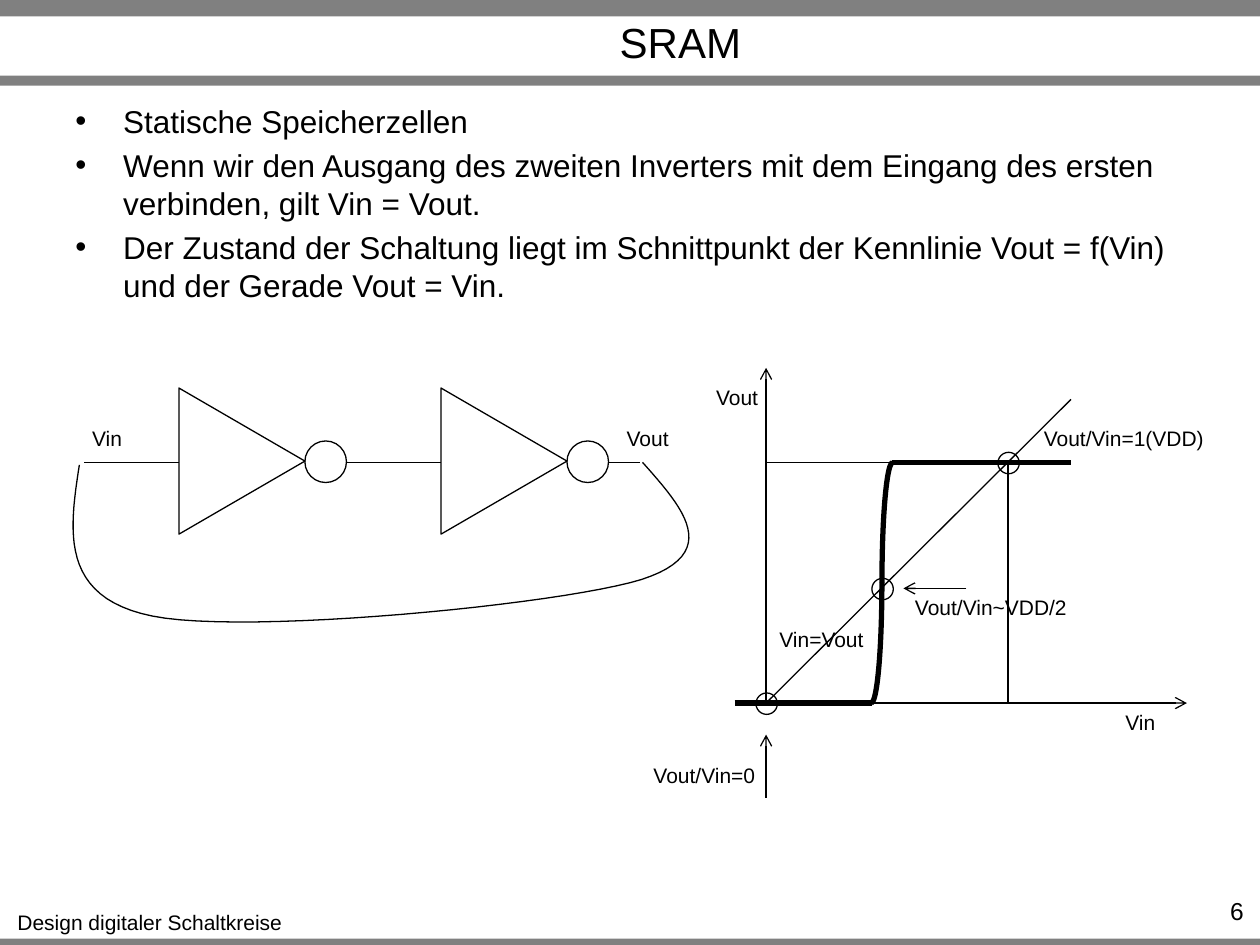
from lxml.etree import SubElement
from pptx import Presentation
from pptx.dml.color import RGBColor
from pptx.enum.shapes import MSO_CONNECTOR, MSO_SHAPE as SHAPE
from pptx.enum.text import MSO_ANCHOR as ANCHOR, MSO_AUTO_SIZE as FIT, PP_ALIGN as ALIGN
from pptx.oxml.ns import qn
from pptx.util import Inches, Pt

BLACK = RGBColor(0, 0, 0)
WHITE = RGBColor(255, 255, 255)
GRAY = RGBColor(128, 128, 128)
THIN, THICK = 0.75, 3

# Content
TITLE = "SRAM"
FOOTER = "Design digitaler Schaltkreise"
PAGE = "6"
BULLETS = [
    "Statische Speicherzellen",
    "Wenn wir den Ausgang des zweiten Inverters mit dem Eingang des ersten "
    "verbinden, gilt Vin = Vout.",
    "Der Zustand der Schaltung liegt im Schnittpunkt der Kennlinie "
    "Vout = f(Vin) und der Gerade Vout = Vin.",
]
LABELS = [  # text, left, top, width
    (FOOTER, 0.03, 7.17, 2.32),
    ("Vin", 0.63, 3.33, 0.44),
    ("Vout", 4.87, 3.33, 0.54),
    ("Vin", 8.83, 5.58, 0.44),
    ("Vout", 5.58, 3, 0.54),
    ("Vin=Vout", 6.08, 4.92, 0.88),
    ("Vout/Vin=0", 5.08, 6, 1.02),
    ("Vout/Vin=1(VDD)", 8.18, 3.33, 1.48),
    ("Vout/Vin~VDD/2", 7.13, 4.67, 1.47),
]
BARS = [(7.45, 0.08), (0, 0.13), (0.6, 0.08)]  # top, height

# Circuit: both inverters sit on the height of the high level
HIGH, LOW = 3.67, 5.58
INVERTER_INPUTS = [0.67, 2.75]
FEEDBACK_START = (5.1, 3.67)
FEEDBACK = [  # two control points and an end point each
    ((5.42, 4.03), (5.74, 4.39), (5.09, 4.6)),
    ((4.44, 4.8), (1.96, 5.04), (1.21, 4.89)),
    ((0.47, 4.74), (0.55, 4.21), (0.63, 3.69)),
]

# Diagram
ORIGIN, MIDDLE, VDD = 6.08, 7, 8
MIDDLE_LEVEL = 4.67
DIAGRAM_LINES = [  # from, to, width, arrow
    ((ORIGIN, LOW), (9.42, LOW), THIN, True),
    ((ORIGIN, LOW), (ORIGIN, 2.92), THIN, True),
    ((5.83, LOW), (6.92, LOW), THICK, False),
    ((7.08, HIGH), (8.5, HIGH), THICK, False),
    ((ORIGIN, LOW), (8.5, 3.17), THIN, False),
    ((ORIGIN, HIGH), (VDD, HIGH), THIN, False),
    ((VDD, HIGH), (VDD, LOW), THIN, False),
    ((ORIGIN, 6.33), (ORIGIN, 5.83), THIN, True),
    ((7.67, MIDDLE_LEVEL), (7.17, MIDDLE_LEVEL), THIN, True),
]
CURVE_ARCS = [(MIDDLE, "flipH"), (MIDDLE - 0.17, "flipV")]  # left, flip
CROSSINGS = [(VDD, HIGH), (MIDDLE, MIDDLE_LEVEL), (ORIGIN, LOW)]

FRAME = {"word_wrap": True, "auto_size": FIT.NONE, "vertical_anchor": ANCHOR.TOP}


def box(*lengths):
    return [Inches(length) for length in lengths]


def write(frame, texts, size, align, **frame_format):
    for name, value in {**FRAME, **frame_format}.items():
        setattr(frame, name, value)
    for index, text in enumerate(texts):
        paragraph = frame.paragraphs[0] if index == 0 else frame.add_paragraph()
        paragraph.text = text
        paragraph.alignment = align
        font_format = {"name": "Arial", "size": Pt(size)}
        for name, value in font_format.items():
            setattr(paragraph.runs[0].font, name, value)
        paragraph.runs[0].font.color.rgb = BLACK


def outline(shape, width=THIN, fill=None):
    shape.shadow.inherit = False
    shape.line.color.rgb = BLACK
    shape.line.width = Pt(width)
    if fill is None:
        shape.fill.background()
    else:
        shape.fill.solid()
        shape.fill.fore_color.rgb = fill


def add_line(shapes, start, end, width=THIN, arrow=False):
    line = shapes.add_connector(MSO_CONNECTOR.STRAIGHT, *box(*start, *end))
    line.line.color.rgb = BLACK
    line.line.width = Pt(width)
    if arrow:
        SubElement(line.line._get_or_add_ln(), qn("a:tailEnd"), type="arrow")
    SubElement(line._element.spPr, qn("a:effectLst"))


def add_inverter(shapes, x):
    """Draw wire, bubble, triangle and input wire from x to the right."""
    tip = x + 1.75
    add_line(shapes, (tip, HIGH), (tip + 0.58, HIGH))
    bubble = shapes.add_shape(SHAPE.OVAL, *box(tip, HIGH - 0.17, 0.33, 0.33))
    outline(bubble, fill=WHITE)
    triangle = shapes.add_shape(SHAPE.ISOSCELES_TRIANGLE,
                                *box(tip - 1.08, HIGH - 0.51, 1.16, 1))
    triangle.rotation = 90
    outline(triangle)
    add_line(shapes, (x, HIGH), (x + 0.75, HIGH))


def bezier(p0, p1, p2, p3, steps=24):
    for step in range(1, steps + 1):
        t = step / steps
        u = 1 - t
        yield tuple(u**3 * a + 3 * u * u * t * b + 3 * u * t * t * c + t**3 * d
                    for a, b, c, d in zip(p0, p1, p2, p3))


def main():
    prs = Presentation()
    prs.slide_width, prs.slide_height = box(10, 7.5)
    slide = prs.slides.add_slide(prs.slide_layouts[5])
    shapes = slide.shapes

    # Bars
    for top, height in BARS:
        bar = shapes.add_shape(SHAPE.RECTANGLE, *box(0, top, 10, height))
        bar.shadow.inherit = False
        bar.fill.solid()
        bar.fill.fore_color.rgb = GRAY
        bar.line.fill.background()

    # Title
    title = shapes.title
    title.left, title.top, title.width, title.height = box(1.3, 0.14, 8.2, 0.38)
    write(title.text_frame, [TITLE], 24, ALIGN.CENTER, vertical_anchor=ANCHOR.MIDDLE)

    # Bullets
    body = shapes.add_textbox(*box(0.5, 0.76, 9, 1.75)).text_frame
    write(body, BULLETS, 18, ALIGN.LEFT)
    for index, paragraph in enumerate(body.paragraphs):
        paragraph.space_before = Pt(3.6 if index else 0)
        properties = paragraph._p.get_or_add_pPr()
        properties.set("marL", str(Inches(0.38)))
        properties.set("indent", str(Inches(-0.38)))
        SubElement(properties, qn("a:buFont"), typeface="Arial")
        SubElement(properties, qn("a:buChar"), char="•")

    # Page number
    page = shapes.add_textbox(*box(9.1, 7.06, 0.87, 0.24))
    write(page.text_frame, [PAGE], 14, ALIGN.RIGHT)

    # Inverters and feedback wire
    for x in INVERTER_INPUTS:
        add_inverter(shapes.add_group_shape().shapes, x)
    points = [FEEDBACK_START]
    for curve in FEEDBACK:
        points.extend(bezier(points[-1], *curve))
    start, *rest = [box(*point) for point in points]
    wire = shapes.build_freeform(*start)
    wire.add_line_segments(rest, close=False)
    outline(wire.convert_to_shape())

    # Axes, transfer curve and crossings
    for line in DIAGRAM_LINES:
        add_line(shapes, *line)
    for left, flip in CURVE_ARCS:
        arc = shapes.add_shape(SHAPE.ARC, *box(left, HIGH, 0.17, LOW - HIGH))
        arc._element.spPr.xfrm.set(flip, "1")
        outline(arc, THICK)
    for x, y in CROSSINGS:
        ring = shapes.add_shape(SHAPE.OVAL, *box(x - 0.08, y - 0.08, 0.17, 0.17))
        outline(ring)

    # Labels
    for text, left, top, width in LABELS:
        label = shapes.add_textbox(*box(left, top, width, 0.3))
        write(label.text_frame, [text], 12, ALIGN.CENTER,
              word_wrap=False, auto_size=FIT.SHAPE_TO_FIT_TEXT)

    prs.save("out.pptx")


if __name__ == "__main__":
    main()
